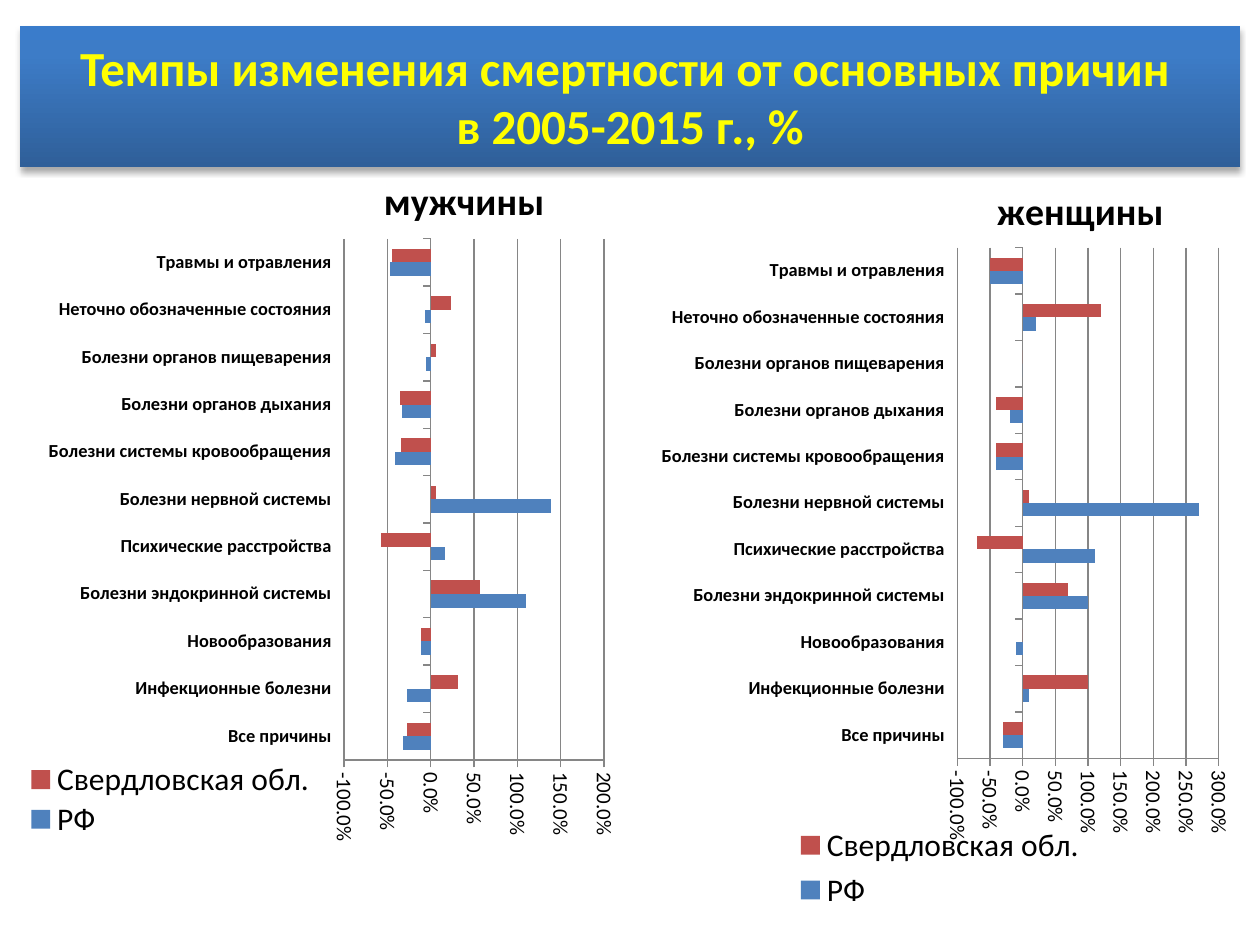
import lxml.etree
import pptx
import pptx.chart.data
import pptx.dml.color
import pptx.enum.chart
import pptx.enum.shapes
import pptx.enum.text
import pptx.oxml
import pptx.oxml.ns
import pptx.util

THEME = {
    "font": "Calibri",
    "title": "FFFF00", "text": "000000", "axis": "868686",
    "series": ["4F81BD", "C0504D"],
    "banner": [(0, "2F5F99"), (80, "3D7CC7"), (100, "3A7CCB")],
    "title_size": 28, "heading_size": 21.6, "legend_size": 18,
    "value_size": 12, "category_size": 10.5,
}
DRAWING = "http://schemas.openxmlformats.org/drawingml/2006/main"


def write_text(text_frame, text, size, color, bold=True, alignment=None):
    paragraph = text_frame.paragraphs[0]
    paragraph.text = text
    paragraph.alignment = alignment
    for run in paragraph.runs:
        run.font.name = THEME["font"]
        run.font.size = pptx.util.Pt(size)
        run.font.bold = bold
        run.font.color.rgb = pptx.dml.color.RGBColor.from_string(color)


def place_part(element, index, **settings):
    """Give a chart part a manual layout in shares of the chart's size."""
    qn = pptx.oxml.ns.qn
    for old_layout in element.findall(qn("c:layout")):
        element.remove(old_layout)
    layout = lxml.etree.Element(qn("c:layout"))
    manual = lxml.etree.SubElement(layout, qn("c:manualLayout"))
    for name, value in settings.items():
        lxml.etree.SubElement(manual, qn(f"c:{name}")).set("val", str(value))
    element.insert(index, layout)


presentation = pptx.Presentation()
presentation.slide_width = pptx.util.Inches(10)
presentation.slide_height = pptx.util.Inches(7.5)
width, height = presentation.slide_width, presentation.slide_height
slide = presentation.slides.add_slide(presentation.slide_layouts[5])
black = pptx.dml.color.RGBColor.from_string(THEME["text"])
gray = pptx.dml.color.RGBColor.from_string(THEME["axis"])

# Data: one chart for men, one for women
causes = [
    "Все причины", "Инфекционные болезни", "Новообразования",
    "Болезни эндокринной системы", "Психические расстройства",
    "Болезни нервной системы", "Болезни системы кровообращения",
    "Болезни органов дыхания", "Болезни органов пищеварения",
    "Неточно обозначенные состояния", "Травмы и отравления",
]
regions = ["РФ", "Свердловская обл."]
groups = [
    {"heading": "мужчины", "box": (0.023, 0.177, 0.473, 0.797), "maximum": 2,
     "heading_at": (0.584, 0), "legend_at": (0, 0.786, 0.474, 0.107),
     "values": [
         [-0.32, -0.27, -0.11, 1.1, 0.17, 1.39, -0.41, -0.33, -0.05, -0.07, -0.47],
         [-0.27, 0.32, -0.11, 0.57, -0.57, 0.06, -0.34, -0.36, 0.06, 0.23, -0.45]]},
    {"heading": "женщины", "box": (0.508, 0.188, 0.476, 0.781), "maximum": 3,
     "heading_at": (0.584, 0), "legend_at": (0.26, 0.87, 0.48, 0.13),
     "values": [
         [-0.3, 0.1, -0.1, 1, 1.1, 2.7, -0.4, -0.2, 0, 0.2, -0.5],
         [-0.3, 1, 0, 0.7, -0.7, 0.1, -0.4, -0.4, 0, 1.2, -0.5]]},
]

for group in groups:
    data = pptx.chart.data.CategoryChartData(number_format="0.0%")
    data.categories = causes
    for region, values in zip(regions, group["values"]):
        data.add_series(region, values)
    left, top, share_wide, share_high = group["box"]
    chart = slide.shapes.add_chart(
        pptx.enum.chart.XL_CHART_TYPE.BAR_CLUSTERED,
        int(left * width), int(top * height),
        int(share_wide * width), int(share_high * height), data).chart
    chart.font.name = THEME["font"]
    chart.font.size = pptx.util.Pt(THEME["legend_size"])
    chart.font.color.rgb = black

    # Heading and plot area
    chart.has_title = True
    write_text(chart.chart_title.text_frame, group["heading"],
               size=THEME["heading_size"], color=THEME["text"])
    x, y = group["heading_at"]
    place_part(chart.chart_title._element, 1, xMode="edge", yMode="edge", x=x, y=y)
    place_part(chart._chartSpace.chart.plotArea, 0, layoutTarget="inner",
               xMode="edge", yMode="edge", x=0.529, y=0.095, w=0.436, h=0.692)

    # Bars
    plot = chart.plots[0]
    plot.gap_width = 150
    plot.overlap = 0
    plot.vary_by_categories = False
    for series, color in zip(plot.series, THEME["series"]):
        series.invert_if_negative = False
        series.format.fill.solid()
        series.format.fill.fore_color.rgb = pptx.dml.color.RGBColor.from_string(color)

    # Axes
    category_axis, value_axis = chart.category_axis, chart.value_axis
    category_axis.tick_label_position = pptx.enum.chart.XL_TICK_LABEL_POSITION.LOW
    category_axis.has_major_gridlines = False
    value_axis.minimum_scale = -1
    value_axis.maximum_scale = group["maximum"]
    value_axis.major_unit = 0.5
    value_axis.has_major_gridlines = True
    value_axis.tick_labels.number_format = "0.0%"
    value_axis.tick_labels.number_format_is_linked = False
    for axis, size, bold in [(category_axis, THEME["category_size"], True),
                             (value_axis, THEME["value_size"], False)]:
        axis.major_tick_mark = pptx.enum.chart.XL_TICK_MARK.OUTSIDE
        axis.tick_labels.font.name = THEME["font"]
        axis.tick_labels.font.size = pptx.util.Pt(size)
        axis.tick_labels.font.bold = bold
        axis.tick_labels.font.color.rgb = black
    for line in (category_axis.format.line, value_axis.format.line,
                 value_axis.major_gridlines.format.line):
        line.color.rgb = gray
        line.width = pptx.util.Pt(0.75)
    label_body = value_axis._element.find(
        f"{pptx.oxml.ns.qn('c:txPr')}/{pptx.oxml.ns.qn('a:bodyPr')}")
    label_body.set("rot", "5400000")
    label_body.set("vert", "horz")

    # Legend
    chart.has_legend = True
    chart.legend.position = pptx.enum.chart.XL_LEGEND_POSITION.BOTTOM
    chart.legend.include_in_layout = False
    chart.legend.font.name = THEME["font"]
    chart.legend.font.size = pptx.util.Pt(THEME["legend_size"])
    chart.legend.font.color.rgb = black
    x, y, w, h = group["legend_at"]
    place_part(chart.legend._element, 1, xMode="edge", yMode="edge", x=x, y=y, w=w, h=h)

# Banner with gradient and shadow
banner = slide.shapes.add_shape(
    pptx.enum.shapes.MSO_SHAPE.RECTANGLE, int(0.016 * width), int(0.028 * height),
    int(0.968 * width), int(0.149 * height))
banner.line.fill.background()
banner.shadow.inherit = False
banner.fill.gradient()
banner.fill.gradient_angle = 90
stop_list = banner._element.spPr.find(f".//{pptx.oxml.ns.qn('a:gsLst')}")
for stop in list(stop_list):
    stop_list.remove(stop)
for position, color in THEME["banner"]:
    stop_list.append(pptx.oxml.parse_xml(
        f'<a:gs xmlns:a="{DRAWING}" pos="{position * 1000}"><a:srgbClr val="{color}"/></a:gs>'))
banner._element.spPr.find(pptx.oxml.ns.qn("a:effectLst")).append(pptx.oxml.parse_xml(
    f'<a:outerShdw xmlns:a="{DRAWING}" blurRad="{pptx.util.Pt(3.5)}" '
    f'dist="{pptx.util.Pt(2.2)}" dir="5400000" rotWithShape="0">'
    '<a:srgbClr val="000000"><a:alpha val="32000"/></a:srgbClr></a:outerShdw>'))

# Title, in front of the banner
title = slide.shapes.title
title.left, title.top = int(0.0235 * width), int(0.018 * height)
title.width, title.height = int(0.953 * width), int(0.167 * height)
title.text_frame.word_wrap = True
title.text_frame.vertical_anchor = pptx.enum.text.MSO_ANCHOR.MIDDLE
write_text(title.text_frame, "Темпы изменения смертности от основных причин \vв 2005-2015 г., %",
           size=THEME["title_size"], color=THEME["title"],
           alignment=pptx.enum.text.PP_ALIGN.CENTER)
slide.shapes._spTree.append(title._element)

presentation.save("out.pptx")
